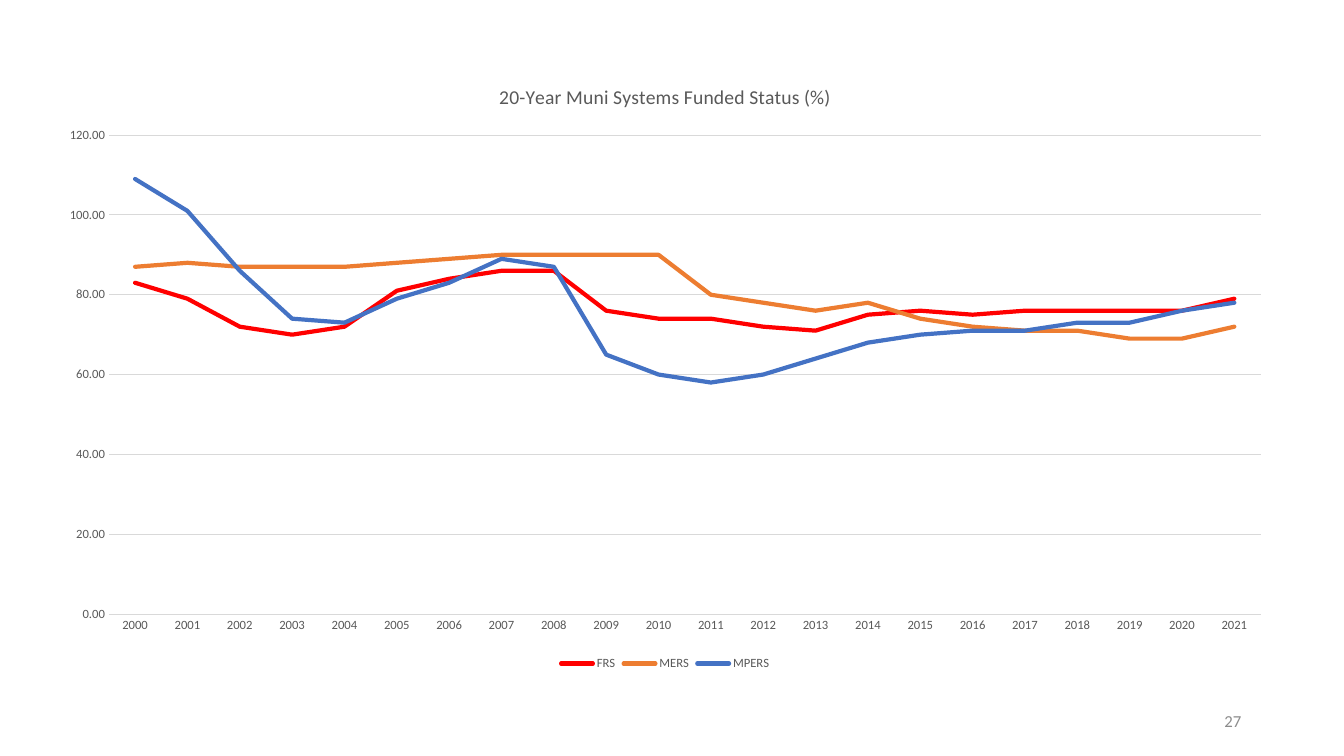
import dataclasses

import pptx
import pptx.chart.data
import pptx.dml.color
import pptx.enum.chart
import pptx.enum.text
import pptx.oxml.ns
import pptx.util

YEARS = range(2000, 2022)
FUNDED_STATUS = {
    "FRS": [83, 79, 72, 70, 72, 81, 84, 86, 86, 76, 74,
            74, 72, 71, 75, 76, 75, 76, 76, 76, 76, 79],
    "MERS": [87, 88, 87, 87, 87, 88, 89, 90, 90, 90, 90,
             80, 78, 76, 78, 74, 72, 71, 71, 69, 69, 72],
    "MPERS": [109, 101, 86, 74, 73, 79, 83, 89, 87, 65, 60,
              58, 60, 64, 68, 70, 71, 71, 73, 73, 76, 78],
}


@dataclasses.dataclass(frozen=True)
class Theme:
    font: str = "Calibri"
    label: str = "595959"
    grid: str = "D9D9D9"
    page: str = "8C8C8C"
    systems: tuple = ("FF0000", "ED7D31", "4472C4")
    title_size: int = 14
    page_size: int = 12
    label_size: int = 9
    grid_width: float = 0.75
    system_width: float = 3


class SlideBuilder:
    """Draws styled elements on one slide, placed in px."""

    EMU_PER_PX = 914400 / 100.8

    def __init__(self, presentation, theme):
        self.theme = theme
        self.slide = presentation.slides.add_slide(presentation.slide_layouts[6])

    def box(self, *lengths):
        return [pptx.util.Emu(round(px * self.EMU_PER_PX)) for px in lengths]

    def apply(self, target, formats):
        for name, value in formats.items():
            setattr(target, name, value)

    def style_font(self, font, size, color):
        self.apply(font, {"name": self.theme.font, "size": pptx.util.Pt(size), "bold": False})
        font.color.rgb = pptx.dml.color.RGBColor.from_string(color)

    def style_line(self, line, color, width):
        line.color.rgb = pptx.dml.color.RGBColor.from_string(color)
        line.width = pptx.util.Pt(width)

    def page_number(self, number, *place):
        frame = self.slide.shapes.add_textbox(*self.box(*place)).text_frame
        self.apply(frame, {"word_wrap": True,
                           "vertical_anchor": pptx.enum.text.MSO_ANCHOR.MIDDLE})
        paragraph = frame.paragraphs[0]
        paragraph.alignment = pptx.enum.text.PP_ALIGN.RIGHT
        digits = paragraph.add_run()
        digits.text = number
        self.style_font(digits.font, self.theme.page_size, self.theme.page)

    def line_chart(self, title, categories, systems, *place):
        theme = self.theme
        data = pptx.chart.data.CategoryChartData(number_format="0.00")
        data.categories = [str(category) for category in categories]
        for name, values in systems.items():
            data.add_series(name, values)
        chart = self.slide.shapes.add_chart(
            pptx.enum.chart.XL_CHART_TYPE.LINE, *self.box(*place), data).chart
        self.style_font(chart.font, theme.label_size, theme.label)

        heading = chart.chart_title.text_frame
        heading.text = title
        self.style_font(heading.paragraphs[0].runs[0].font, theme.title_size, theme.label)
        chart.chart_title.include_in_layout = False

        chart.has_legend = True
        self.apply(chart.legend, {
            "position": pptx.enum.chart.XL_LEGEND_POSITION.BOTTOM,
            "include_in_layout": False})
        self.style_font(chart.legend.font, theme.label_size, theme.label)

        years, percent = chart.category_axis, chart.value_axis
        for axis in (years, percent):
            self.apply(axis, {"major_tick_mark": pptx.enum.chart.XL_TICK_MARK.NONE,
                              "minor_tick_mark": pptx.enum.chart.XL_TICK_MARK.NONE})
            self.style_font(axis.tick_labels.font, theme.label_size, theme.label)
        self.apply(percent, {"minimum_scale": 0, "maximum_scale": 120, "major_unit": 20})
        self.apply(percent.tick_labels, {"number_format": "0.00",
                                         "number_format_is_linked": False})
        percent.format.line.fill.background()
        for line in (years.format.line, percent.major_gridlines.format.line):
            self.style_line(line, theme.grid, theme.grid_width)

        plot = chart.plots[0]
        plot.vary_by_categories = False
        for system, color in zip(plot.series, theme.systems):
            system.smooth = False
            system.marker.style = pptx.enum.chart.XL_MARKER_STYLE.NONE
            self.style_line(system.format.line, color, theme.system_width)
            outline = system._element.find(
                pptx.oxml.ns.qn("c:spPr")).find(pptx.oxml.ns.qn("a:ln"))
            outline.set("cap", "rnd")


def main():
    presentation = pptx.Presentation()
    presentation.slide_width = pptx.util.Inches(13.33)
    presentation.slide_height = pptx.util.Inches(7.5)
    builder = SlideBuilder(presentation, Theme())
    builder.page_number("27", 949, 701, 302, 40)
    builder.line_chart("20-Year Muni Systems Funded Status (%)", YEARS, FUNDED_STATUS,
                       45, 62, 1240, 613)
    presentation.save("out.pptx")


if __name__ == "__main__":
    main()
